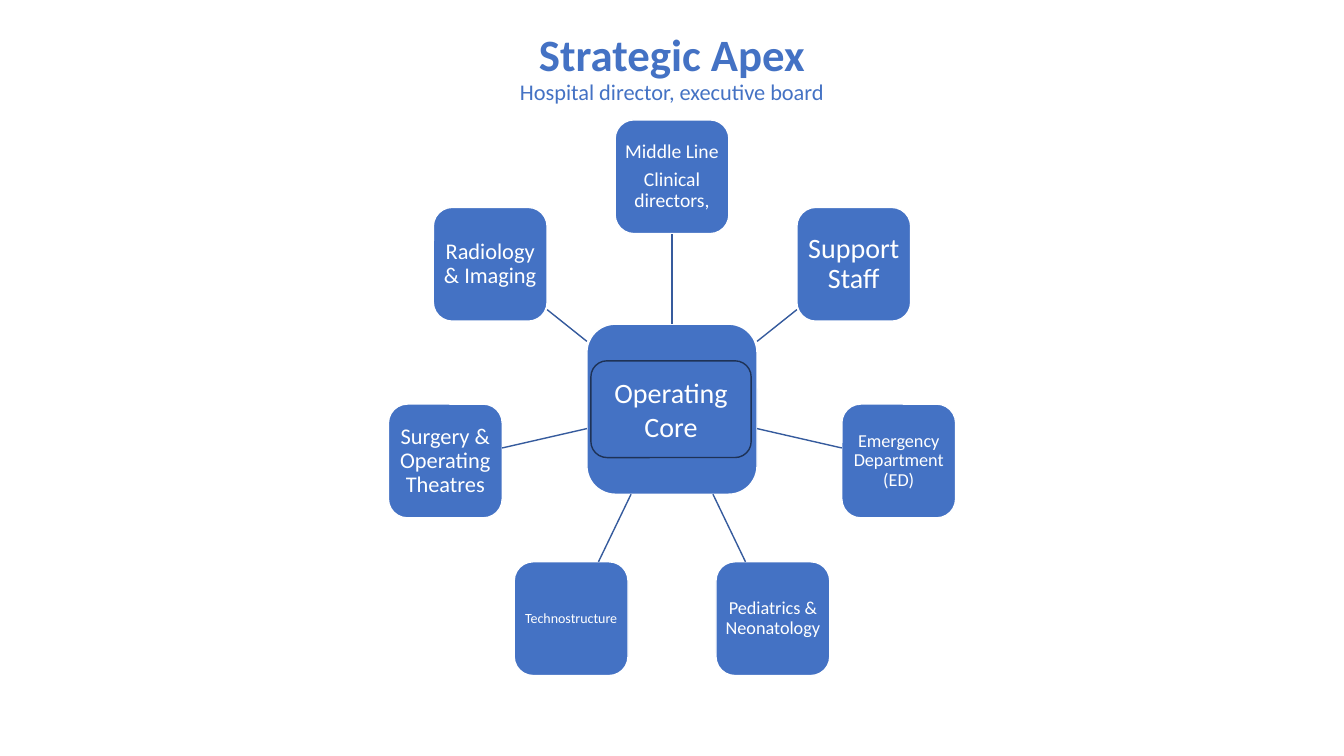
from dataclasses import dataclass
from math import cos, pi, sin

from lxml import etree
from pptx import Presentation
from pptx.dml.color import RGBColor
from pptx.enum.shapes import MSO_CONNECTOR, MSO_SHAPE
from pptx.enum.text import MSO_ANCHOR, MSO_AUTO_SIZE, PP_ALIGN
from pptx.oxml.ns import qn
from pptx.shapes.autoshape import Shape
from pptx.slide import Slide
from pptx.text.text import TextFrame
from pptx.util import Inches, Pt

ROUNDED = MSO_SHAPE.ROUNDED_RECTANGLE
STRAIGHT = MSO_CONNECTOR.STRAIGHT
MIDDLE = MSO_ANCHOR.MIDDLE
CENTER = PP_ALIGN.CENTER
NO_FIT = MSO_AUTO_SIZE.NONE
TITLE_ONLY_LAYOUT = 5
TOP_SITE, BOTTOM_SITE = 0, 2

SLIDE_WIDTH = Inches(13.33)
SLIDE_HEIGHT = Inches(7.5)


@dataclass(frozen=True)
class Theme:
    font: str = "Calibri"
    blue: str = "4472C4"
    spoke: str = "365B9D"
    outline: str = "1E3256"
    white: str = "FFFFFF"
    title: int = 32
    subtitle: int = 16
    large: int = 20
    medium: int = 16
    regular: int = 14
    small: int = 13
    tiny: int = 10
    line_width: int = 1


@dataclass(frozen=True)
class Box:
    """Centre offset from mid-slide, centre height and size, in percent of slide height."""
    x: float
    y: float
    width: float
    height: float

    def bounds(self) -> tuple[int, int, int, int]:
        return (
            SLIDE_WIDTH // 2 + share(self.x - self.width / 2),
            share(self.y - self.height / 2),
            share(self.width),
            share(self.height),
        )


@dataclass(frozen=True)
class TextLine:
    text: str
    size: int
    color: str
    bold: bool = False


@dataclass(frozen=True)
class Unit:
    paragraphs: tuple[str, ...]
    size: int


THEME = Theme()
TITLE = Box(0, 9.17, 65.33, 12)
HUB = Box(0, 54.13, 22.5, 22.5)
CORE = Box(-0.13, 54.13, 21.2, 12.8)
ORBIT = 30.75
UNIT_SIZE = 15.05
UNIT_INSET = Inches(0.02)

UNITS = (
    Unit(("Middle Line", "Clinical directors,"), THEME.regular),
    Unit(("Support Staff",), THEME.large),
    Unit(("Emergency Department (ED)",), THEME.small),
    Unit(("Pediatrics & Neonatology",), THEME.small),
    Unit(("Technostructure",), THEME.tiny),
    Unit(("Surgery & Operating Theatres",), THEME.medium),
    Unit(("Radiology & Imaging",), THEME.medium),
)


def share(percent: float) -> int:
    return round(SLIDE_HEIGHT * percent / 100)


def set_format(target: object, values: dict[str, object]) -> None:
    for name, value in values.items():
        setattr(target, name, value)


def write_text(frame: TextFrame, lines: list[TextLine], spacing: float = 0.9,
               after: float = 0) -> None:
    set_format(frame, {"word_wrap": True, "auto_size": NO_FIT, "vertical_anchor": MIDDLE})
    for index, line in enumerate(lines):
        paragraph = frame.add_paragraph() if index else frame.paragraphs[0]
        set_format(paragraph, {
            "alignment": CENTER,
            "line_spacing": spacing,
            "space_before": Pt(0),
            "space_after": Pt(line.size * after),
        })
        run = paragraph.add_run()
        run.text = line.text
        set_format(run.font, {"name": THEME.font, "size": Pt(line.size), "bold": line.bold})
        run.font.color.rgb = RGBColor.from_string(line.color)


def add_rounded(slide: Slide, box: Box, outline: str) -> Shape:
    shape = slide.shapes.add_shape(ROUNDED, *box.bounds())
    shape.shadow.inherit = False
    shape.fill.solid()
    shape.fill.fore_color.rgb = RGBColor.from_string(THEME.blue)
    shape.line.color.rgb = RGBColor.from_string(outline)
    shape.line.width = Pt(THEME.line_width)
    return shape


def add_title(slide: Slide) -> None:
    title = slide.shapes.title
    set_format(title, dict(zip(("left", "top", "width", "height"), TITLE.bounds())))
    write_text(title.text_frame, [
        TextLine("Strategic Apex", THEME.title, THEME.blue, True),
        TextLine("Hospital director, executive board", THEME.subtitle, THEME.blue),
    ])


def add_unit(slide: Slide, unit: Unit, box: Box) -> Shape:
    shape = add_rounded(slide, box, THEME.white)
    sides = ("margin_left", "margin_top", "margin_right", "margin_bottom")
    set_format(shape.text_frame, dict.fromkeys(sides, UNIT_INSET))
    lines = [TextLine(text, unit.size, THEME.white) for text in unit.paragraphs]
    write_text(shape.text_frame, lines, after=0.35)
    return shape


def add_spoke(slide: Slide, hub: Shape, unit: Shape, across: float, down: float) -> None:
    reach = max(abs(across), abs(down))
    ends = []
    for distance in (HUB.width / 2 / reach, ORBIT - UNIT_SIZE / 2 / reach):
        ends.append(SLIDE_WIDTH // 2 + share(HUB.x + across * distance))
        ends.append(share(HUB.y + down * distance))
    spoke = slide.shapes.add_connector(STRAIGHT, *ends)
    spoke.line.color.rgb = RGBColor.from_string(THEME.spoke)
    spoke.line.width = Pt(THEME.line_width)
    etree.SubElement(spoke._element.spPr, qn("a:effectLst"))
    if across == 0:
        spoke.begin_connect(hub, TOP_SITE)
        spoke.end_connect(unit, BOTTOM_SITE)


def add_wheel(slide: Slide) -> None:
    hub = add_rounded(slide, HUB, THEME.white)
    for index, unit in enumerate(UNITS):
        angle = 2 * pi * index / len(UNITS)
        across, down = sin(angle), -cos(angle)
        box = Box(HUB.x + ORBIT * across, HUB.y + ORBIT * down, UNIT_SIZE, UNIT_SIZE)
        add_spoke(slide, hub, add_unit(slide, unit, box), across, down)
    core = add_rounded(slide, CORE, THEME.outline)
    write_text(core.text_frame, [TextLine("Operating Core", THEME.large, THEME.white)], 1.0)


def main() -> None:
    presentation = Presentation()
    set_format(presentation, {"slide_width": SLIDE_WIDTH, "slide_height": SLIDE_HEIGHT})
    slide = presentation.slides.add_slide(presentation.slide_layouts[TITLE_ONLY_LAYOUT])
    add_title(slide)
    add_wheel(slide)
    presentation.save("out.pptx")


if __name__ == "__main__":
    main()
